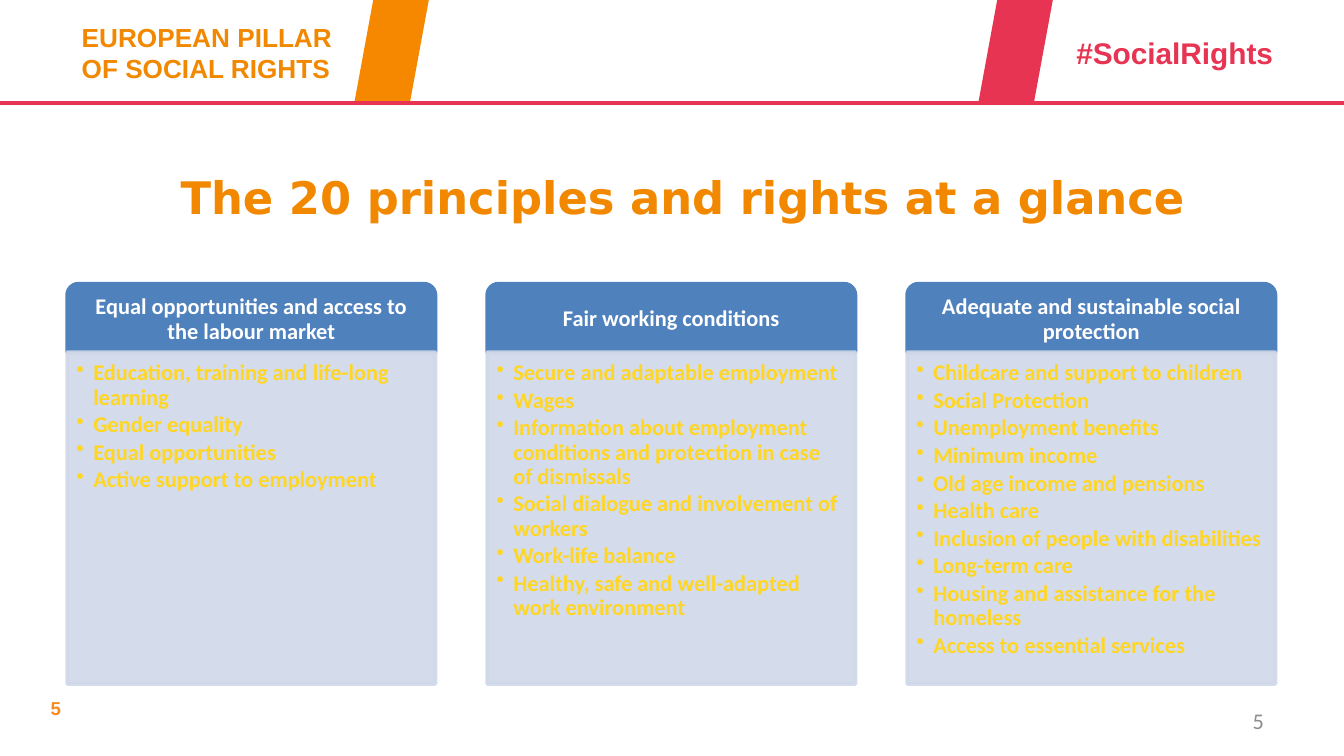
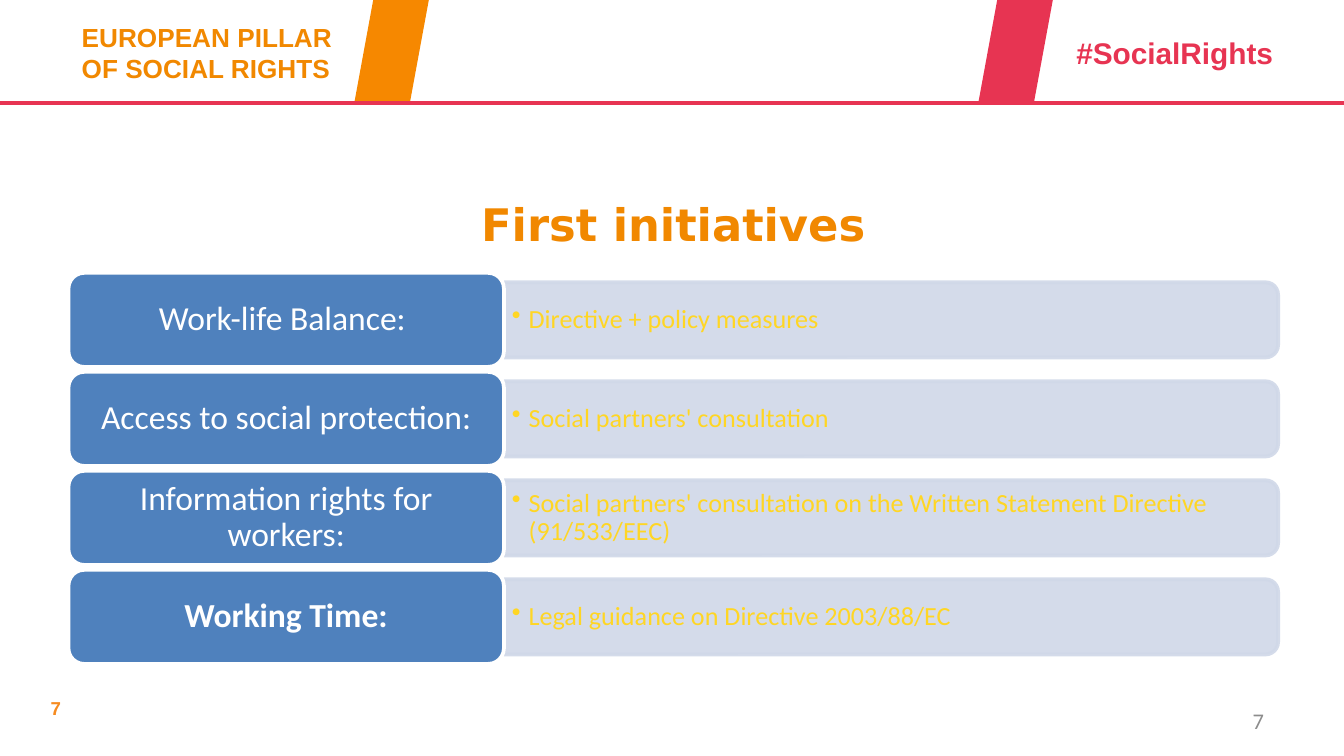
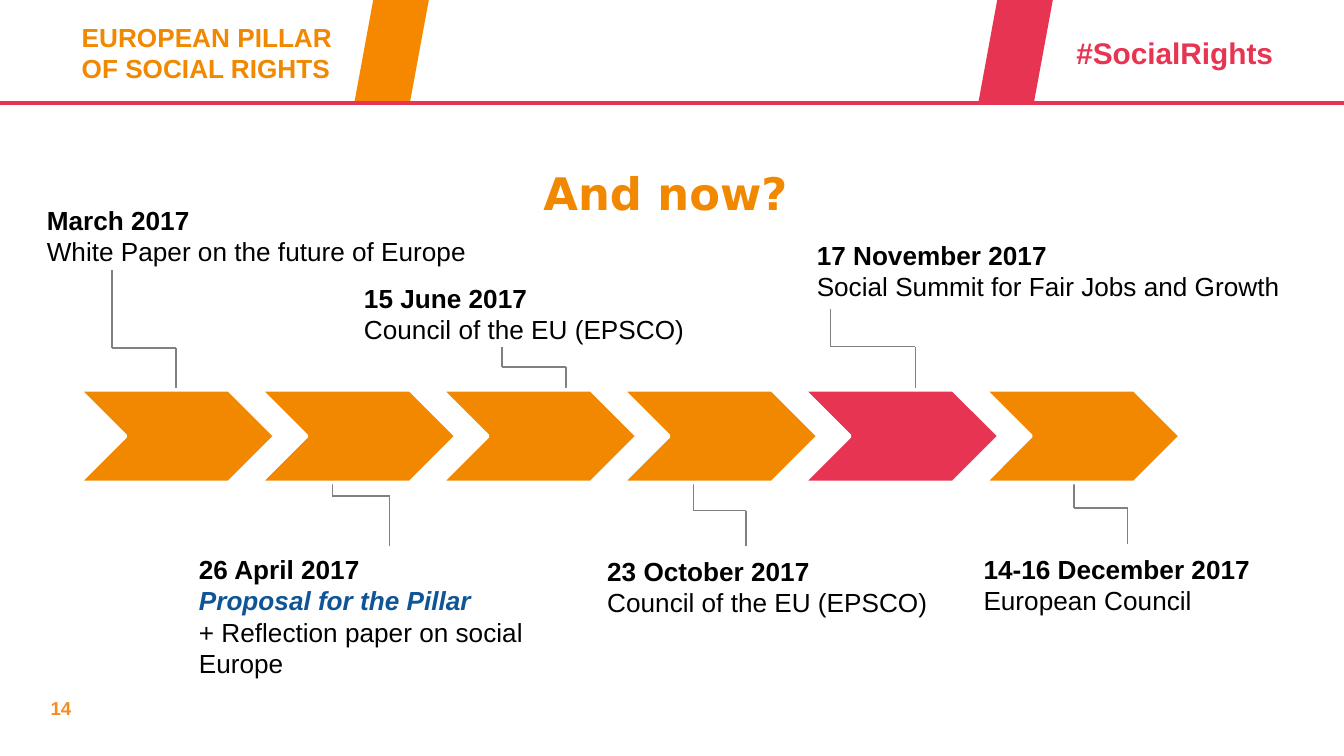
from itertools import pairwise

from lxml.etree import SubElement
from pptx import Presentation
from pptx.dml.color import RGBColor
from pptx.enum.shapes import MSO_CONNECTOR, MSO_SHAPE
from pptx.enum.text import MSO_ANCHOR, PP_ALIGN
from pptx.oxml.ns import qn
from pptx.util import Pt

# Shared look
ORANGE, RED, BLUE = "F18800", "E73452", "4F81BD"
PALE, YELLOW, WHITE, GREY = "D0D8E8", "FFD624", "FFFFFF", "808080"
LEFT, MID, RIGHT = PP_ALIGN.LEFT, PP_ALIGN.CENTER, PP_ALIGN.RIGHT
INSET = (7.2, 3.6, 7.2, 3.6)


def paint(target, color, alpha=None):
    """Set a solid colour, with opacity in percent if given."""
    target.solid()
    target.fore_color.rgb = RGBColor.from_string(color)
    if alpha:
        for node in target._xPr.iter(qn("a:srgbClr")):
            SubElement(node, qn("a:alpha"), val=str(alpha * 1000))


def shape(slide, kind, box, fill, edge=None, alpha=None):
    item = slide.shapes.add_shape(kind, *map(Pt, box))
    item.shadow.inherit = False
    paint(item.fill, fill, alpha)
    if edge:
        item.line.width = Pt(2)
        paint(item.line.fill, edge, alpha)
    else:
        item.line.fill.background()
    return item


def line(slide, start, end, color, width):
    item = slide.shapes.add_connector(
        MSO_CONNECTOR.STRAIGHT, *map(Pt, (*start, *end)))
    item.line.width = Pt(width)
    paint(item.line.fill, color)
    SubElement(item._element.spPr, qn("a:effectLst"))


def style(para, size, color, font="Arial", bold=False, slant=False):
    para.font.size = Pt(size)
    para.font.name = font
    para.font.bold = bold
    para.font.italic = slant
    para.font.color.rgb = RGBColor.from_string(color)


def text(slide, box, lines, size, color, font="Arial", bold=False, align=LEFT,
         anchor=MSO_ANCHOR.TOP, inset=INSET, tight=False, bullet=False):
    frame = slide.shapes.add_textbox(*map(Pt, box)).text_frame
    frame.word_wrap = True
    frame.vertical_anchor = anchor
    (frame.margin_left, frame.margin_top,
     frame.margin_right, frame.margin_bottom) = map(Pt, inset)
    for i, words in enumerate(lines):
        para = frame.add_paragraph() if i else frame.paragraphs[0]
        para.text = words
        para.alignment = align
        if tight:
            para.line_spacing = 0.9
            para.space_after = Pt(1.8)
        if bullet:
            props = para._p.get_or_add_pPr()
            props.set("marL", str(Pt(9)))
            props.set("indent", str(Pt(-9)))
            SubElement(props, qn("a:buChar"), char="•")
        style(para, size, color, font, bold)
    return frame


def header(slide, number):
    """Band at the top and number at the lower left."""
    text(slide, (20, 370, 157, 19.5), [number], 10, "F68B20", bold=True)
    text(slide, (36.7, 7.9, 183, 41), ["EUROPEAN PILLAR \vOF SOCIAL RIGHTS"],
         14, ORANGE, bold=True)
    line(slide, (0, 55.2), (720, 55.2), RED, 2.25)
    text(slide, (569.5, 15, 124.6, 26.6), ["#SocialRights"], 16, RED, bold=True)
    for x, color in ((190, "F68800"), (524.3, RED)):
        shape(slide, MSO_SHAPE.PARALLELOGRAM, (x, 0, 39.7, 54), color)


def title(slide, box, words):
    text(slide, box, [words], 24, ORANGE, "DejaVu Sans", True, MID,
         MSO_ANCHOR.MIDDLE)


def footer(slide, number):
    text(slide, (516.2, 375, 168, 21.6), [number], 12, "8C8C8C", "Calibri",
         align=RIGHT, anchor=MSO_ANCHOR.MIDDLE)


def column(slide, box, head, points):
    """Blue heading over a pale list."""
    x, y, w, h = box
    top = 36.7
    shape(slide, MSO_SHAPE.ROUND_2_SAME_RECTANGLE, (x, y, w, top), BLUE, BLUE)
    text(slide, (x + 1.8, y + 1.8, w - 3.6, top - 1.8), [head], 12, WHITE,
         "Calibri", True, MID, MSO_ANCHOR.MIDDLE, (6.5, 3.6, 6.5, 3.6), True)
    body = (x, y + top, w, h - top)
    shape(slide, MSO_SHAPE.RECTANGLE, body, PALE, PALE, 90)
    text(slide, body, points, 12, YELLOW, "Calibri", True,
         inset=(5, 5, 6.5, 7.2), tight=True, bullet=True)


def row(slide, box, label, point, bold):
    """Blue label at the left of a pale bar."""
    x, y, w, h = box
    side, thick = 233.3, 40.3
    wide = w - side
    # The bar stands upright, then turns about its centre
    bar = shape(slide, MSO_SHAPE.ROUND_2_SAME_RECTANGLE,
                (x + side + (wide - thick) / 2, y + (h - wide) / 2, thick, wide),
                PALE, PALE, 90)
    bar.rotation = 90
    text(slide, (x + side, y + (h - 36.7) / 2, wide - 2, 36.7), [point], 14,
         YELLOW, "Calibri", anchor=MSO_ANCHOR.MIDDLE,
         inset=(4.2, 2.1, 4.2, 2.1), tight=True, bullet=True)
    shape(slide, MSO_SHAPE.ROUNDED_RECTANGLE, (x, y, side, h), BLUE, WHITE)
    text(slide, (x + 2.5, y + 2.5, side - 5, h - 5), [label], 18, WHITE,
         "Calibri", bold, MID, MSO_ANCHOR.MIDDLE, (5, 2.7, 5, 2.7), True)


def leader(slide, x, y, drop, run, fall):
    """Stepped line: down, across, down."""
    bend = y + drop
    path = [(x, y), (x, bend), (x + run, bend), (x + run, bend + fall)]
    for start, end in pairwise(path):
        line(slide, start, end, GREY, 0.75)


def timeline(slide, box, events):
    """Chevron strip with dated notes placed from its corner."""
    x, y, w, h = box
    for _, _, (dx, dy, *legs) in events:
        leader(slide, x + dx, y + dy, *legs)
    wide = 105
    step = (w - wide) / (len(events) - 1)
    for i in range(len(events)):
        shape(slide, MSO_SHAPE.CHEVRON, (x + i * step, y, wide, h),
              RED if i == 4 else ORANGE, WHITE)
    for lines, (dx, dy, *size), _ in events:
        frame = text(slide, (x + dx, y + dy, *size), lines, 14, "000000")
        frame.paragraphs[0].font.bold = True
        if len(lines) == 3:
            style(frame.paragraphs[1], 14, "0F5494", bold=True, slant=True)


PILLARS = [
    ("Equal opportunities and access to the labour market",
     ["Education, training and life-long learning", "Gender equality",
      "Equal opportunities", "Active support to employment"]),
    ("Fair working conditions",
     ["Secure and adaptable employment", "Wages",
      "Information about employment conditions and protection in case of "
      "dismissals",
      "Social dialogue and involvement of workers", "Work-life balance",
      "Healthy, safe and well-adapted work environment"]),
    ("Adequate and sustainable social protection",
     ["Childcare and support to children", "Social Protection",
      "Unemployment benefits", "Minimum income",
      "Old age income and pensions", "Health care",
      "Inclusion of people with disabilities", "Long-term care",
      "Housing and assistance for the homeless",
      "Access to essential services"]),
]

STEPS = [
    ("Work-life Balance: ", "Directive + policy measures"),
    ("Access to social protection:", "Social partners' consultation"),
    ("Information rights for workers:",
     "Social partners' consultation on the Written Statement Directive "
     "(91/533/EEC)"),
    ("Working Time:", "Legal guidance on Directive 2003/88/EC"),
]

# Lines, note box, leader (x, y, drop, run, fall), from the strip corner
EVENTS = [
    (["March 2017", "White Paper on the future of Europe"],
     (-24.5, -103, 244, 41), (17.5, -64, 41.7, 34.3, 28)),
    (["26 April 2017", "Proposal for the Pillar",
      "+ Reflection paper on social Europe"],
     (57, 84.2, 224, 75), (135.5, 39.6, 17.3, 30.8, 26.6)),
    (["15 June 2017", "Council of the EU (EPSCO)"],
     (145.4, -61.2, 190, 41), (226.5, -23, 10.8, 34.3, 28.8)),
    (["23 October 2017", "Council of the EU (EPSCO)"],
     (275.7, 85, 190, 41), (329, 50.4, 14.4, 28.1, 18.7)),
    (["17 November 2017", "Social Summit for Fair Jobs and Growth"],
     (388, -84.2, 266, 41), (402.5, -43.2, 20.2, 45.4, 28.8)),
    (["14-16 December 2017", "European Council"],
     (477.3, 84.2, 198, 41), (532.8, 49, 14.4, 28.8, 19.4)),
]


def main():
    deck = Presentation()
    deck.slide_width, deck.slide_height = Pt(720), Pt(405)

    def page(number, box, words):
        slide = deck.slides.add_slide(deck.slide_layouts[6])
        header(slide, number)
        title(slide, box, words)
        return slide

    # Three columns
    slide = page("5", (11.5, 77.8, 708.5, 55.4),
                 "The 20 principles and rights at a glance")
    footer(slide, "5")
    for i, (head, points) in enumerate(PILLARS):
        column(slide, (36 + 225 * i, 152, 197.3, 214.5), head, points)

    # Four rows
    slide = page("7", (36.7, 92.2, 648, 55.4), "First initiatives")
    footer(slide, "7")
    for i, (label, point) in enumerate(STEPS):
        row(slide, (36.7, 146.2 + 53.04 * i, 648, 50.4), label, point,
            i == len(STEPS) - 1)

    # Dates
    slide = page("14", (36.7, 77.8, 648, 51), "And now? ")
    timeline(slide, (42.5, 208.8, 590, 49.7), EVENTS)

    deck.save("out.pptx")


if __name__ == "__main__":
    main()
